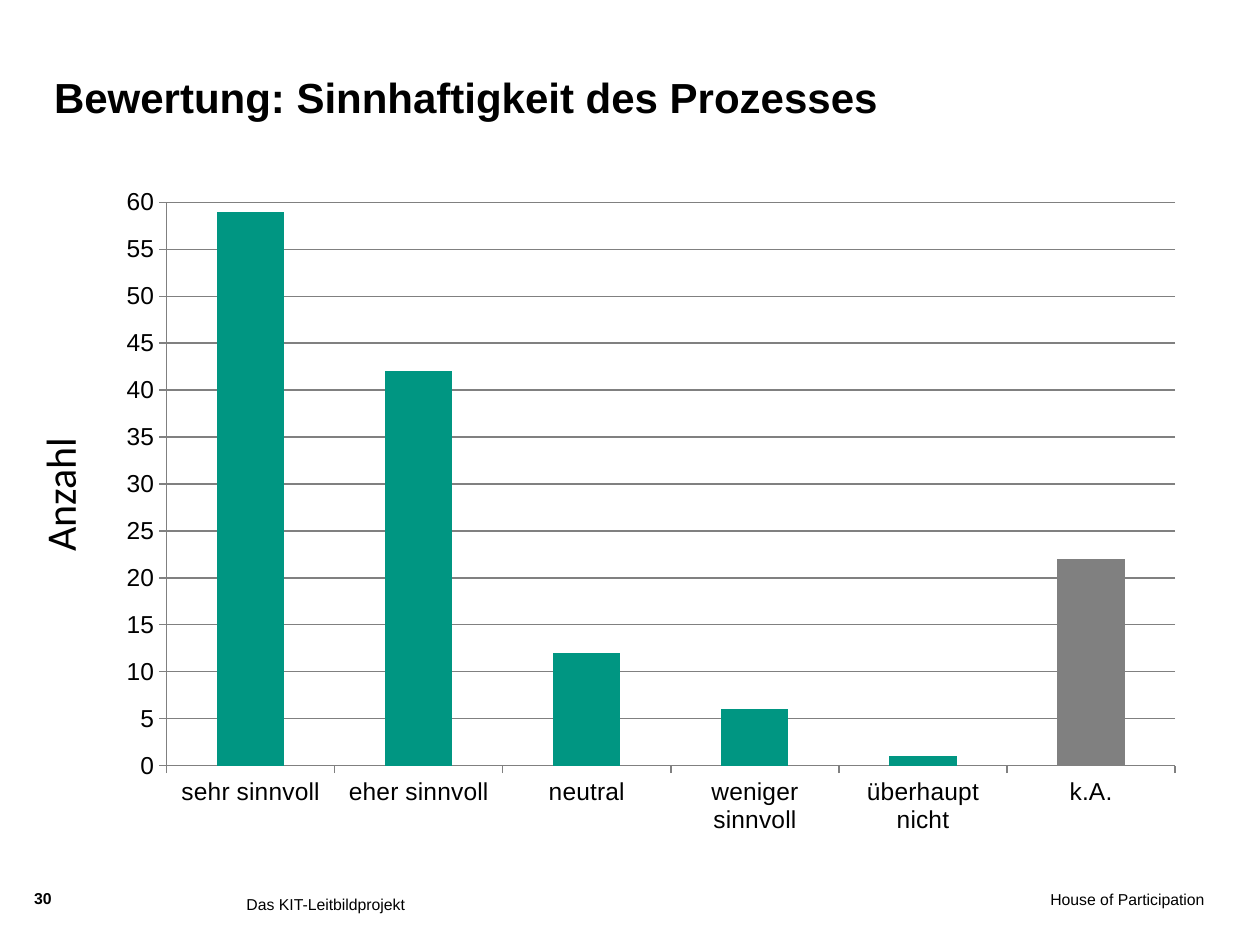
from pptx import Presentation
from pptx.chart.data import CategoryChartData
from pptx.dml.color import RGBColor
from pptx.enum.chart import XL_CHART_TYPE, XL_TICK_MARK
from pptx.enum.text import MSO_ANCHOR, PP_ALIGN
from pptx.util import Cm, Pt

BLACK = RGBColor(0x00, 0x00, 0x00)
GREEN = RGBColor(0x00, 0x96, 0x82)
GREY = RGBColor(0x80, 0x80, 0x80)
COLUMNS = XL_CHART_TYPE.COLUMN_CLUSTERED
TICK_OUT = XL_TICK_MARK.OUTSIDE
TICK_NONE = XL_TICK_MARK.NONE
LEFT, RIGHT = PP_ALIGN.LEFT, PP_ALIGN.RIGHT
TOP, BOTTOM = MSO_ANCHOR.TOP, MSO_ANCHOR.BOTTOM


class SlideBuilder:
    """Holds the style and the page being filled."""

    font = "Arial"
    small, large = 9, 24
    chart_size, axis_size = 18, 14

    def __init__(self, page):
        self.page = page

    def style(self, font, size, bold=False, name=None):
        font.name = name or self.font
        font.size = Pt(size)
        font.bold = bold
        font.color.rgb = BLACK

    def text(self, content, left, top, width, height, size=small, bold=False,
             name=None, align=LEFT, anchor=TOP, inset=(0, 0), rotation=0):
        box = self.page.shapes.add_textbox(Cm(left), Cm(top), Cm(width), Cm(height))
        box.rotation = rotation
        frame = box.text_frame
        frame.word_wrap = True
        frame.vertical_anchor = anchor
        frame.margin_left = frame.margin_right = Cm(inset[0])
        frame.margin_top = frame.margin_bottom = Cm(inset[1])
        para = frame.paragraphs[0]
        para.alignment = align
        span = para.add_run()
        span.text = content
        self.style(span.font, size, bold, name)

    def column_chart(self, values, left, top, width, height, maximum, step, highlights):
        data = CategoryChartData()
        data.categories = list(values)
        data.add_series("Series 1", list(values.values()))
        chart = self.page.shapes.add_chart(
            COLUMNS, Cm(left), Cm(top), Cm(width), Cm(height), data).chart
        chart.has_legend = False
        chart.has_title = False
        self.style(chart.font, self.chart_size)

        plot = chart.plots[0]
        plot.gap_width = 150
        plot.vary_by_categories = False
        series = plot.series[0]
        series.format.fill.solid()
        series.format.fill.fore_color.rgb = GREEN
        names = list(values)
        for category, color in highlights.items():
            fill = series.points[names.index(category)].format.fill
            fill.solid()
            fill.fore_color.rgb = color

        for axis in (chart.category_axis, chart.value_axis):
            axis.major_tick_mark = TICK_OUT
            axis.minor_tick_mark = TICK_NONE
            axis.format.line.color.rgb = GREY
            self.style(axis.tick_labels.font, self.axis_size)
        scale = chart.value_axis
        scale.minimum_scale = 0
        scale.maximum_scale = maximum
        scale.major_unit = step
        scale.has_major_gridlines = True
        scale.major_gridlines.format.line.color.rgb = GREY


def main():
    deck = Presentation()
    deck.slide_width, deck.slide_height = Cm(25.4), Cm(19.05)
    builder = SlideBuilder(deck.slides.add_slide(deck.slide_layouts[6]))

    # Title
    builder.text("Bewertung: Sinnhaftigkeit des Prozesses", 1.09, 0.91, 19.2, 1.55,
                 size=builder.large, bold=True, anchor=BOTTOM)

    # Ratings chart and its axis caption
    ratings = {
        "sehr sinnvoll": 59,
        "eher sinnvoll": 42,
        "neutral": 12,
        "weniger sinnvoll": 6,
        "überhaupt nicht": 1,
        "k.A.": 22,
    }
    builder.column_chart(ratings, 2.11, 3.53, 22.02, 13.54,
                         maximum=60, step=5, highlights={"k.A.": GREY})
    builder.text("Anzahl", -0.61, 8.23, 4.19, 1.6,
                 size=builder.large, name="Calibri", rotation=270)

    # Footer
    builder.text("30", 0.69, 17.91, 0.91, 0.61, bold=True)
    builder.text("Das KIT-Leitbildprojekt", 4.72, 17.91, 11.81, 0.99, inset=(0.25, 0.13))
    builder.text("House of Participation", 16.69, 17.93, 7.59, 0.99, align=RIGHT)

    deck.save("out.pptx")


if __name__ == "__main__":
    main()
